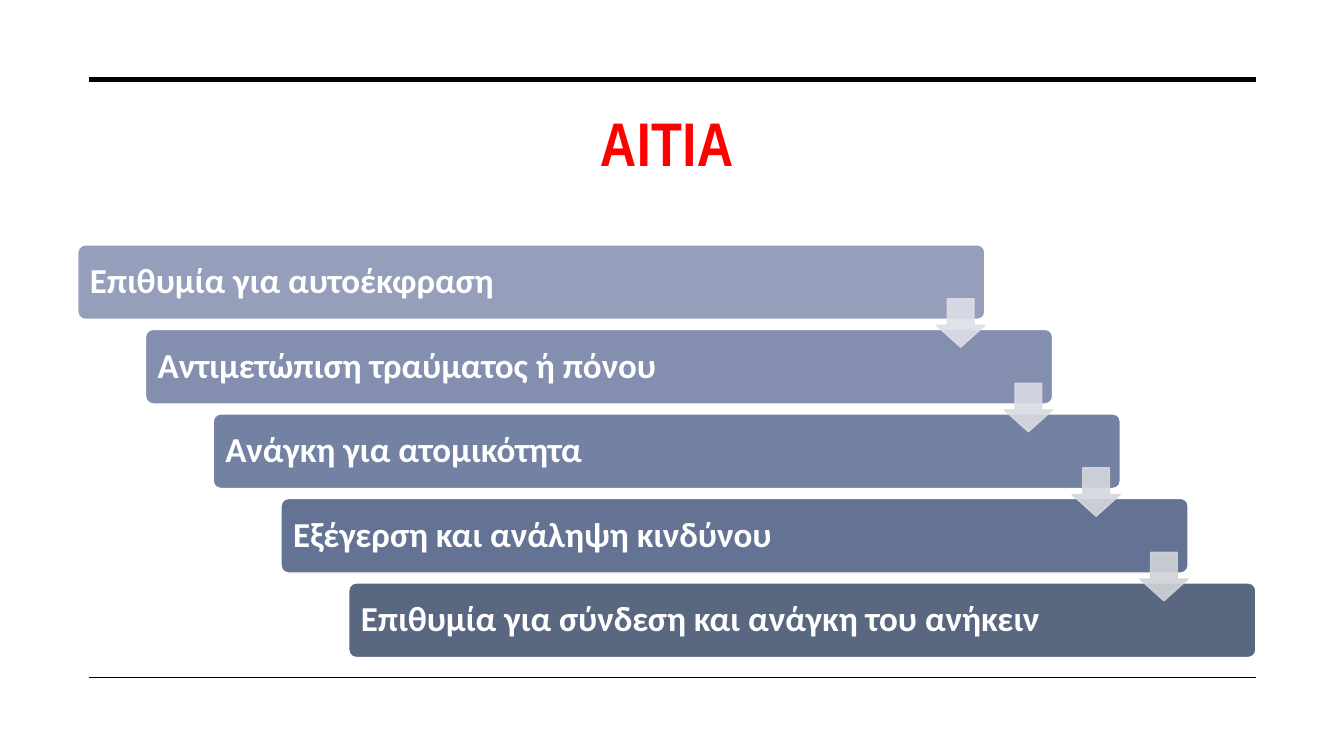
import lxml.etree
import pptx
import pptx.dml.color
import pptx.enum.shapes
import pptx.enum.text
import pptx.oxml.ns
import pptx.util
from pptx.util import Cm

RGBColor = pptx.dml.color.RGBColor
SHAPE = pptx.enum.shapes.MSO_SHAPE
BLACK = RGBColor(0x00, 0x00, 0x00)
WHITE = RGBColor(0xFF, 0xFF, 0xFF)
RED = RGBColor(0xFF, 0x00, 0x00)

CAUSES = [
    ("Επιθυμία για αυτοέκφραση", RGBColor(0x95, 0x9E, 0xBB)),
    ("Αντιμετώπιση τραύματος ή πόνου", RGBColor(0x84, 0x8F, 0xAF)),
    ("Ανάγκη για ατομικότητα", RGBColor(0x73, 0x81, 0xA2)),
    ("Εξέγερση και ανάληψη κινδύνου", RGBColor(0x64, 0x73, 0x94)),
    ("Επιθυμία για σύνδεση και ανάγκη του ανήκειν", RGBColor(0x59, 0x67, 0x81)),
]
ARROW_COLORS = [
    RGBColor(0xDD, 0xDF, 0xE7),
    RGBColor(0xD9, 0xDB, 0xE2),
    RGBColor(0xD5, 0xD7, 0xDD),
    RGBColor(0xD1, 0xD3, 0xD8),
]


def add_rule(slide, left, top, width, weight):
    rule = slide.shapes.add_connector(
        pptx.enum.shapes.MSO_CONNECTOR.STRAIGHT, left, top, left + width, top)
    rule.line.color.rgb = BLACK
    rule.line.width = pptx.util.Pt(weight)
    lxml.etree.SubElement(rule._element.spPr, pptx.oxml.ns.qn("a:effectLst"))


def add_title(slide, left, top, width, height):
    frame = slide.shapes.add_textbox(left, top, width, height).text_frame
    frame.word_wrap = True
    heading = frame.paragraphs[0]
    heading.text = "ΑΙΤΙΑ"
    heading.alignment = pptx.enum.text.PP_ALIGN.CENTER
    heading.font.name = "Arial Narrow"
    heading.font.size = pptx.util.Pt(44)
    heading.font.bold = True
    heading.font.color.rgb = RED
    heading.runs[0]._r.get_or_add_rPr().set("spc", "30")


def add_filled(slide, preset, left, top, width, height, fill, outline):
    shape = slide.shapes.add_shape(preset, left, top, width, height)
    shape.shadow.inherit = False
    shape.fill.solid()
    shape.fill.fore_color.rgb = fill
    shape.line.color.rgb = outline
    shape.line.width = pptx.util.Pt(1)
    return shape


def add_cause(slide, left, top, width, height, wording, color):
    bar = add_filled(slide, SHAPE.ROUNDED_RECTANGLE, left, top, width, height, color, WHITE)
    bar.adjustments[0] = 0.1
    frame = bar.text_frame
    frame.word_wrap = True
    frame.vertical_anchor = pptx.enum.text.MSO_ANCHOR.MIDDLE
    frame.margin_left = frame.margin_right = Cm(0.25)
    frame.margin_top = frame.margin_bottom = Cm(0.25)
    cause = frame.paragraphs[0]
    cause.text = wording
    cause.alignment = pptx.enum.text.PP_ALIGN.LEFT
    cause.line_spacing = 0.9
    cause.font.name = "Calibri"
    cause.font.size = pptx.util.Pt(25)
    cause.font.bold = True
    cause.font.color.rgb = WHITE


def add_arrow(slide, left, top, side, color):
    arrow = add_filled(slide, SHAPE.DOWN_ARROW, left, top, side, side, color, color)
    arrow.adjustments[0] = 0.55
    arrow.adjustments[1] = 0.45
    for tint in arrow._element.spPr.findall(".//" + pptx.oxml.ns.qn("a:srgbClr")):
        lxml.etree.SubElement(tint, pptx.oxml.ns.qn("a:alpha")).set("val", "90000")


def add_staircase(slide, left, top, width, height):
    bar_width, bar_height = Cm(22.86), Cm(1.88)
    arrow_side, arrow_drop = Cm(1.22), Cm(1.36)
    steps = len(CAUSES) - 1
    step_x = (width - bar_width) // steps
    step_y = (height - bar_height) // steps
    for index, (wording, color) in enumerate(CAUSES):
        add_cause(slide, left + index * step_x, top + index * step_y,
                  bar_width, bar_height, wording, color)
    for index, color in enumerate(ARROW_COLORS):
        add_arrow(slide, left + index * step_x + bar_width - arrow_side,
                  top + index * step_y + arrow_drop, arrow_side, color)


def main():
    deck = pptx.Presentation()
    deck.slide_width, deck.slide_height = Cm(33.87), Cm(19.05)
    slide = deck.slides.add_slide(deck.slide_layouts[6])
    add_rule(slide, Cm(2.24), Cm(2.01), Cm(29.41), 3.5)
    add_rule(slide, Cm(2.24), Cm(17.07), Cm(29.41), 1)
    add_title(slide, Cm(1.96), Cm(2.51), Cm(29.69), Cm(3.2))
    add_staircase(slide, Cm(1.96), Cm(6.17), Cm(29.69), Cm(10.4))
    deck.save("out.pptx")


if __name__ == "__main__":
    main()
